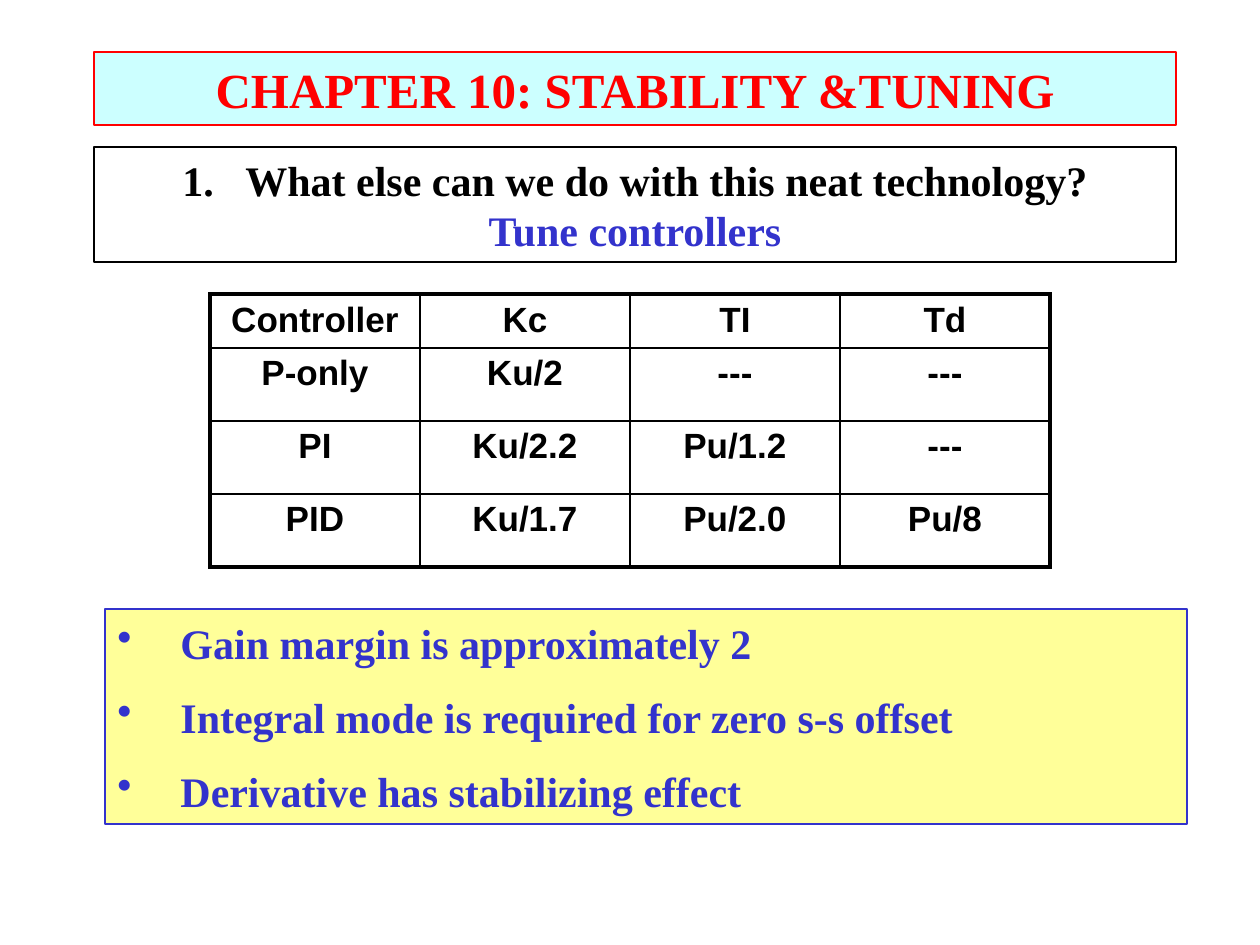
import pptx
import pptx.util
import pptx.dml.color
import pptx.enum.shapes
import pptx.enum.text
import pptx.oxml.ns
import lxml.etree

PX = 914400 // 126
SERIF, SANS = "Times New Roman", "Arial"
COLORS = {"red": "FF0000", "cyan": "CCFFFF", "black": "000000",
          "blue": "3333CC", "yellow": "FFFF99"}
CENTER = pptx.enum.text.PP_ALIGN.CENTER
LEFT = pptx.enum.text.PP_ALIGN.LEFT


def px(length):
    return pptx.util.Emu(length * PX)


def rgb(name):
    return pptx.dml.color.RGBColor.from_string(COLORS[name])


def add_xml(parent, tag, **attributes):
    return lxml.etree.SubElement(parent, pptx.oxml.ns.qn(tag), attributes)


def write(paragraph, wording, font, size, color, align=CENTER):
    paragraph.alignment = align
    run = paragraph.add_run()
    run.text = wording
    run.font.name = font
    run.font.size = pptx.util.Pt(size)
    run.font.bold = True
    run.font.color.rgb = rgb(color)


def hang(paragraph, marker=None, **attributes):
    """Give a half-inch hanging indent and, if named, a list marker."""
    properties = paragraph._p.get_or_add_pPr()
    properties.set("marL", str(px(63)))
    properties.set("indent", str(-px(63)))
    if marker:
        add_xml(properties, marker, **attributes)


def add_panel(slide, box, line, fill=None):
    """Add an outlined rectangle and return its text frame."""
    panel = slide.shapes.add_shape(
        pptx.enum.shapes.MSO_SHAPE.RECTANGLE, *map(px, box))
    panel.shadow.inherit = False
    panel.line.color.rgb = rgb(line)
    panel.line.width = pptx.util.Pt(0.75)
    if fill:
        panel.fill.solid()
        panel.fill.fore_color.rgb = rgb(fill)
    else:
        panel.fill.background()
    frame = panel.text_frame
    frame.word_wrap = True
    frame.vertical_anchor = pptx.enum.text.MSO_ANCHOR.MIDDLE
    return frame


def add_title(slide, box):
    frame = add_panel(slide, box, "red", "cyan")
    write(frame.paragraphs[0], "CHAPTER 10: STABILITY &TUNING", SERIF, 28, "red")


def add_question(slide, box):
    frame = add_panel(slide, box, "black")
    question, answer = frame.paragraphs[0], frame.add_paragraph()
    write(question, "What else can we do with this neat technology?",
          SERIF, 24, "black")
    hang(question, "a:buAutoNum", type="arabicPeriod")
    write(answer, "Tune controllers", SERIF, 24, "blue")
    hang(answer)


def set_borders(cell, widths):
    properties = cell._tc.get_or_add_tcPr()
    for position, (side, width) in enumerate(widths.items()):
        border = lxml.etree.Element(pptx.oxml.ns.qn(f"a:ln{side}"),
                                    w=str(pptx.util.Pt(width)))
        add_xml(add_xml(border, "a:solidFill"), "a:srgbClr", val=COLORS["black"])
        properties.insert(position, border)


def add_tuning_table(slide, box, row_heights):
    rules = [
        ("Controller", "Kc", "TI", "Td"),
        ("P-only", "Ku/2", "---", "---"),
        ("PI", "Ku/2.2", "Pu/1.2", "---"),
        ("PID", "Ku/1.7", "Pu/2.0", "Pu/8"),
    ]
    last_row, last_column = len(rules) - 1, len(rules[0]) - 1
    table = slide.shapes.add_table(
        len(rules), len(rules[0]), *map(px, box)).table
    table.first_row = table.horz_banding = False
    for r, rule in enumerate(rules):
        table.rows[r].height = px(row_heights[r])
        for c, wording in enumerate(rule):
            cell = table.cell(r, c)
            cell.fill.background()
            write(cell.text_frame.paragraphs[0], wording, SANS, 20, "black")
            outer = {"L": c == 0, "R": c == last_column,
                     "T": r == 0, "B": r == last_row}
            set_borders(cell, {side: 2.25 if edge else 1
                               for side, edge in outer.items()})


def add_remarks(slide, box):
    frame = add_panel(slide, box, "blue", "yellow")
    remarks = ("Gain margin is approximately 2",
               "Integral mode is required for zero s-s offset",
               "Derivative has stabilizing effect")
    for i, remark in enumerate(remarks):
        paragraph = frame.add_paragraph() if i else frame.paragraphs[0]
        write(paragraph, remark, SERIF, 24, "blue", LEFT)
        if i:
            paragraph.space_before = pptx.util.Pt(13.5)
        hang(paragraph, "a:buChar", char="•")


def main():
    deck = pptx.Presentation()
    deck.slide_width, deck.slide_height = px(1260), px(945)
    slide = deck.slides.add_slide(deck.slide_layouts[6])
    add_title(slide, (94, 52, 1082, 73))
    add_question(slide, (94, 147, 1082, 115))
    add_tuning_table(slide, (210, 294, 840, 273), (54, 73, 73, 73))
    add_remarks(slide, (105, 609, 1082, 215))
    deck.save("out.pptx")


if __name__ == "__main__":
    main()
